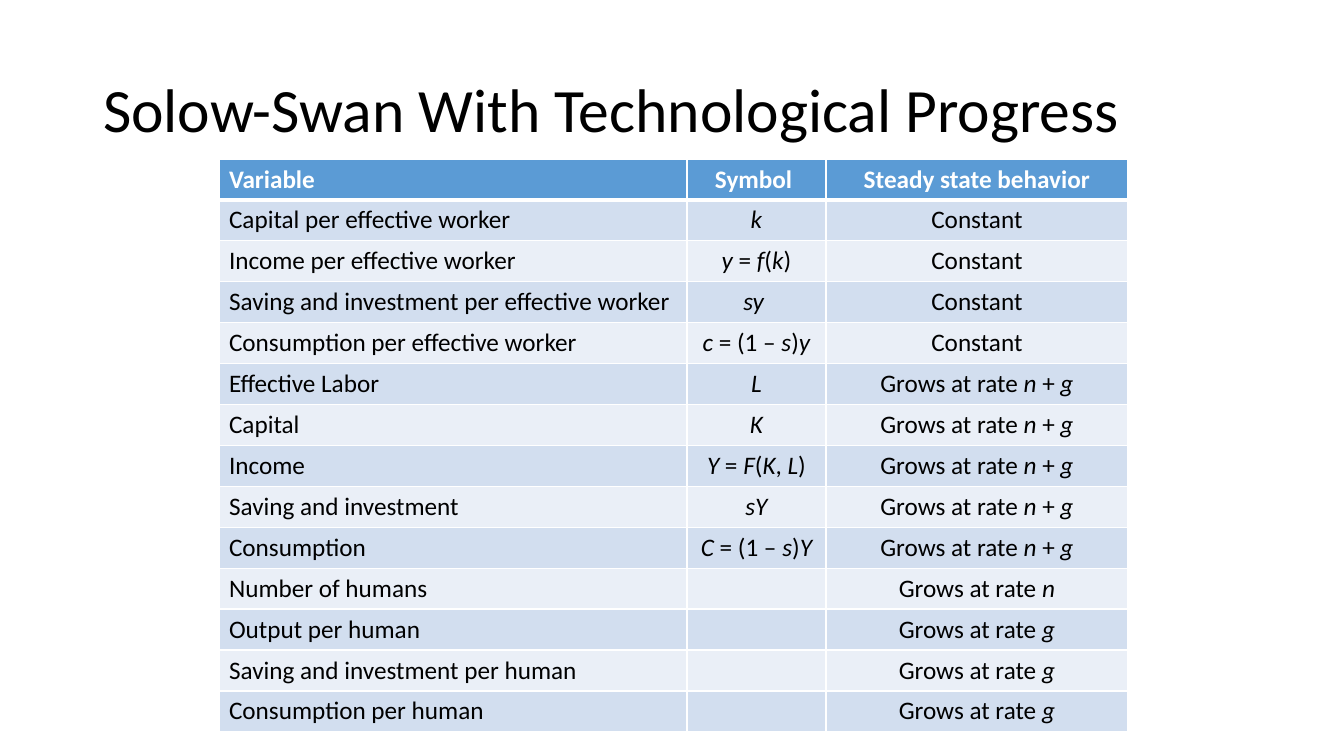
from lxml import etree
from pptx import Presentation
from pptx.dml.color import RGBColor
from pptx.enum.text import MSO_ANCHOR, PP_ALIGN
from pptx.oxml.ns import qn
from pptx.util import Pt

LEFT, CENTER = PP_ALIGN.LEFT, PP_ALIGN.CENTER
MIDDLE = MSO_ANCHOR.MIDDLE
PX = 914400 / 100.8
WHITE, BLACK = "FFFFFF", "000000"
HEAD, BANDS = "5B9BD5", ("EAEFF7", "D2DEEF")


def rgb(code):
    return RGBColor.from_string(code)


def write(frame, text, size=18, color=BLACK, bold=False, align=LEFT):
    """Fill a text frame; parts between asterisks are italic."""
    para = frame.paragraphs[0]
    para.alignment = align
    for i, part in enumerate(text.split("*")):
        if part:
            run = para.add_run()
            run.text = part
            font = run.font
            font.name, font.size = "Calibri", Pt(size)
            font.bold, font.italic = bold, i % 2 == 1
            font.color.rgb = rgb(color)
    return para


deck = Presentation()
deck.slide_width, deck.slide_height = round(1344 * PX), round(756 * PX)
slide = deck.slides.add_slide(deck.slide_layouts[5])

# Title
title = slide.shapes.title
title.left, title.top = round(93 * PX), round(40 * PX)
title.width, title.height = round(1159 * PX), round(146 * PX)
title.text_frame.word_wrap = True
title.text_frame.vertical_anchor = MIDDLE
para = write(title.text_frame, "Solow-Swan With Technological Progress", size=44)
para.line_spacing = 0.9

# Table contents
both = "Grows at rate *n *+* g*"
rows = [
    ("Variable", "Symbol ", "Steady state behavior"),
    ("Capital per effective worker", "*k*", "Constant"),
    ("Income per effective worker", "*y* = *f*(*k*)", "Constant"),
    ("Saving and investment per effective worker", "*sy *", "Constant"),
    ("Consumption per effective worker", "*c *= (1 – *s*)*y*", "Constant"),
    ("Effective Labor", "*L*", both),
    ("Capital", "*K*", both),
    ("Income", "*Y* = *F*(*K*, *L*)", both),
    ("Saving and investment", "*sY*", both),
    ("Consumption", "*C *= (1 – *s*)*Y*", both),
    ("Number of humans", "", "Grows at rate *n*"),
    ("Output per human", "", "Grows at rate *g*"),
    ("Saving and investment per human", "", "Grows at rate *g*"),
    ("Consumption per human", "", "Grows at rate *g*"),
]

# Table grid
widths = (468, 139, 302)
tall = round(573 * PX)
table = slide.shapes.add_table(
    len(rows), len(widths), round(219 * PX), round(159 * PX),
    round(sum(widths) * PX), tall).table
for col, width in zip(table.columns, widths):
    col.width = round(width * PX)
for row in table.rows:
    row.height = tall // len(rows)

# Cells, with a thick line under the header
for r, row in enumerate(rows):
    for c, text in enumerate(row):
        cell = table.cell(r, c)
        props = cell._tc.get_or_add_tcPr()
        for side in "LRTB":
            thick = (r, side) in ((0, "B"), (1, "T"))
            line = etree.SubElement(props, qn("a:ln" + side), w=str(Pt(3 if thick else 1)))
            fill = etree.SubElement(line, qn("a:solidFill"))
            etree.SubElement(fill, qn("a:srgbClr"), val=WHITE)
        cell.fill.solid()
        cell.fill.fore_color.rgb = rgb(BANDS[r % 2] if r else HEAD)
        write(cell.text_frame, text, color=BLACK if r else WHITE,
              bold=r == 0, align=CENTER if c else LEFT)

deck.save("out.pptx")
